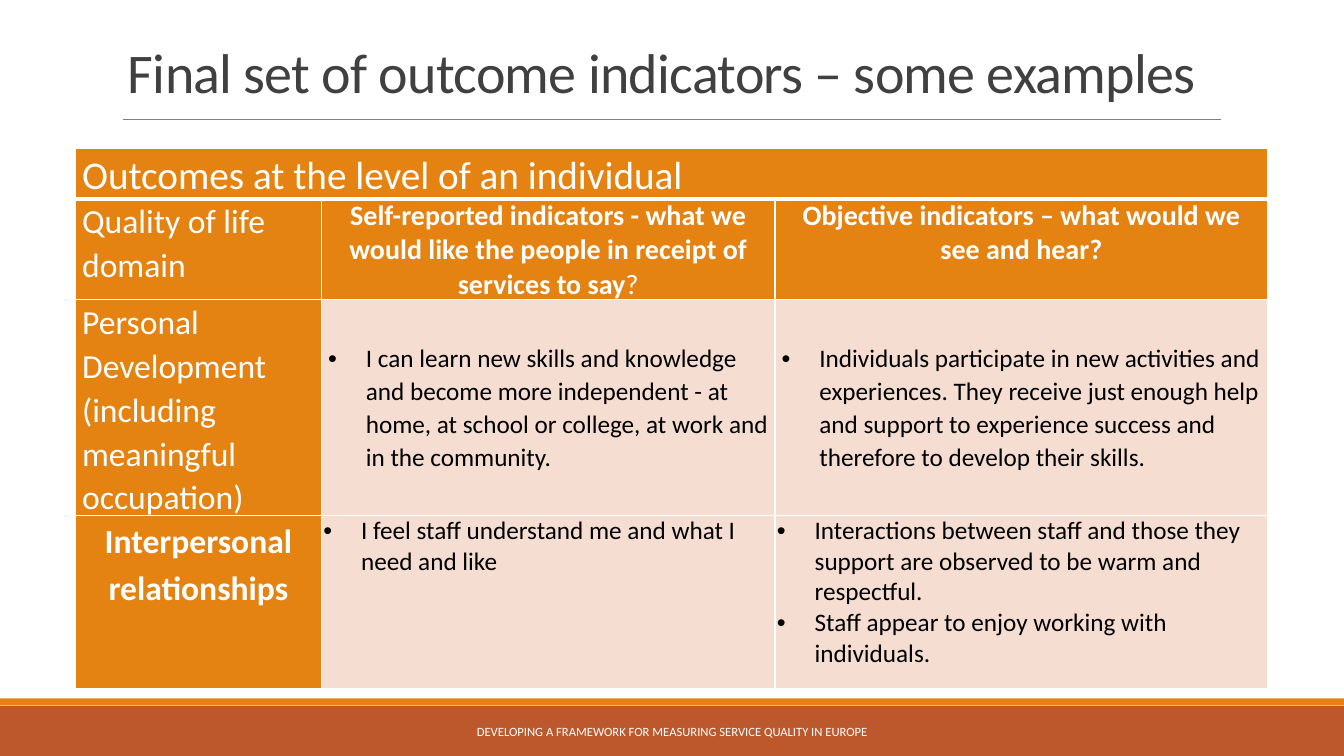
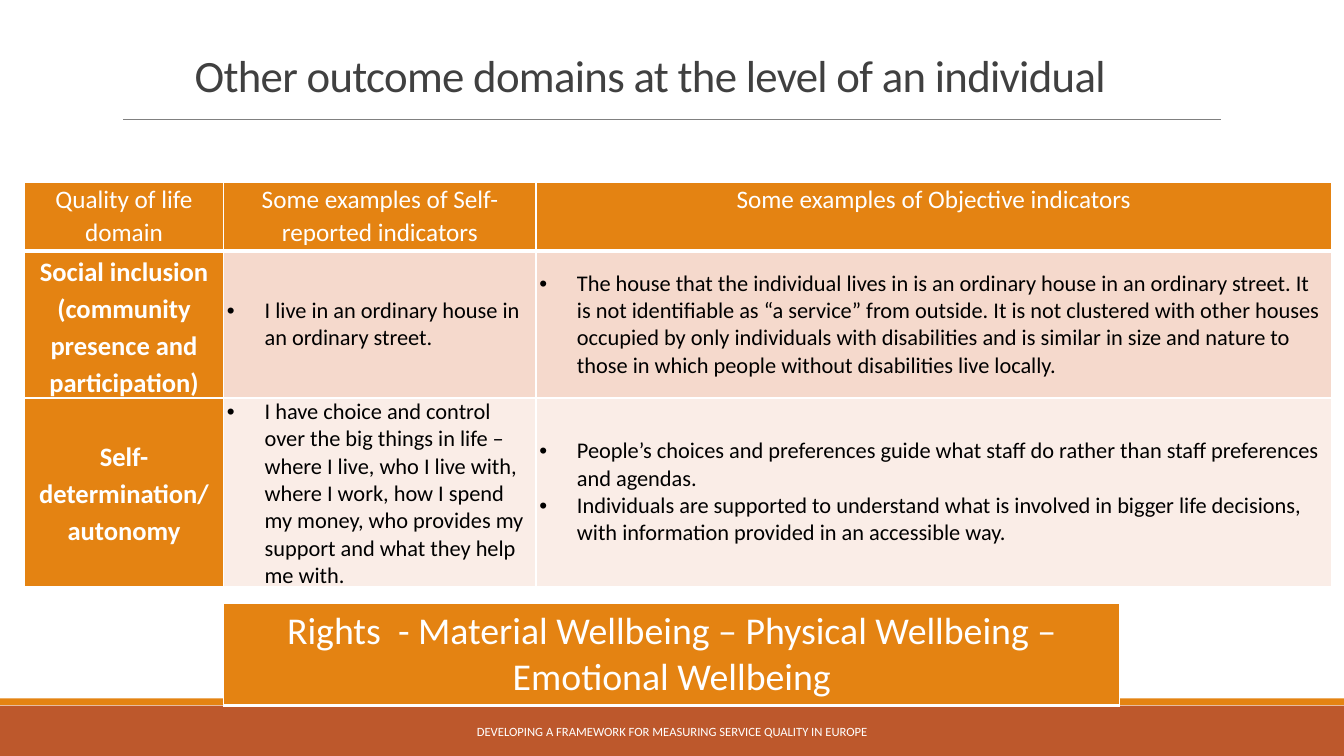
from lxml import etree
from pptx import Presentation
from pptx.dml.color import RGBColor
from pptx.enum.shapes import MSO_CONNECTOR, MSO_SHAPE
from pptx.enum.text import MSO_ANCHOR, MSO_AUTO_SIZE, PP_ALIGN
from pptx.oxml.ns import qn
from pptx.util import Cm, Pt

rgb = RGBColor.from_string
TOP, MIDDLE = MSO_ANCHOR.TOP, MSO_ANCHOR.MIDDLE
CENTER = PP_ALIGN.CENTER

# Shared look
FONT = "Calibri"
ORANGE, RUST, WHITE, BLACK = "E48312", "BD582C", "FFFFFF", "000000"
GREY, DARK = "808080", "404040"
PEACH, BLUSH, PALE = "F5DDD2", "F5D9CC", "FAEDE7"
FOOTER = "DEVELOPING A FRAMEWORK FOR MEASURING SERVICE QUALITY IN EUROPE"


def write(frame, *paragraphs, size, color=WHITE, bold=False, align=PP_ALIGN.LEFT,
          line=1.0, after=0, bullet=False, tracking=0, plain_end=""):
    """Fill a text frame; plain_end is a closing piece that is never bold."""
    for number, text in enumerate(paragraphs):
        paragraph = frame.add_paragraph() if number else frame.paragraphs[0]
        paragraph.alignment = align
        paragraph.line_spacing = line
        paragraph.space_before, paragraph.space_after = Pt(0), Pt(after)
        if bullet:
            props = paragraph._p.get_or_add_pPr()
            props.set("marL", str(Cm(0.95)))
            props.set("indent", str(-Cm(0.95)))
            etree.SubElement(props, qn("a:buFont"), typeface="Arial")
            etree.SubElement(props, qn("a:buChar"), char="•")
        for piece, weight in ((text, bold), (plain_end, False)):
            if piece:
                run = paragraph.add_run()
                run.text = piece
                run.font.name, run.font.size, run.font.bold = FONT, Pt(size), weight
                run.font.color.rgb = rgb(color)
                if tracking:
                    run._r.get_or_add_rPr().set("spc", str(tracking))


def add_grid(slide, left, top, widths, heights, inset, rows):
    """Add a table; a row with a single cell spans all columns."""
    grid = slide.shapes.add_table(len(heights), len(widths), Cm(left), Cm(top),
                                  Cm(sum(widths)), Cm(sum(heights))).table
    grid.horz_banding = False
    for column, width in zip(grid.columns, widths):
        column.width = Cm(width)
    for r, (height, (side, cells)) in enumerate(zip(heights, rows)):
        grid.rows[r].height = Cm(height)
        for cell in grid.rows[r].cells:
            props = cell._tc.get_or_add_tcPr()
            for edge in ("lnL", "lnR", "lnT", "lnB"):
                weight = 3 if r == 0 and edge == "lnB" else 1
                border = etree.SubElement(props, qn(f"a:{edge}"), w=str(Pt(weight)))
                paint = etree.SubElement(border, qn("a:solidFill"))
                etree.SubElement(paint, qn("a:srgbClr"), val=WHITE)
        if len(cells) < len(widths):
            grid.cell(r, 0).merge(grid.cell(r, len(widths) - 1))
        for c, (fill, anchor, style, *paragraphs) in enumerate(cells):
            cell = grid.cell(r, c)
            cell.fill.solid()
            cell.fill.fore_color.rgb = rgb(fill)
            cell.margin_left = cell.margin_right = Cm(side)
            cell.margin_top = cell.margin_bottom = Cm(inset)
            cell.vertical_anchor = anchor
            write(cell.text_frame, *paragraphs, **style)


# Text styles of the tables
banner = dict(size=28, line=1.07, after=8)
domain = dict(size=24, line=1.07, after=8)
question = dict(size=20, bold=True, align=CENTER, after=8)
domain_bold = dict(size=24, bold=True, align=CENTER, line=1.15, after=12)
indicator = dict(size=18, color=BLACK, bullet=True)
indicator_airy = dict(indicator, line=1.07)
heading = dict(size=18, align=CENTER, line=1.07, after=8)
domain_small = dict(domain_bold, size=19)
indicator_small = dict(indicator, size=16)

# Tables: left, top, column widths, row heights, vertical inset, rows;
# a row is its side inset and its cells
examples = (1.9, 3.74, [6.2, 11.43, 12.42], [1.22, 2.54, 5.38, 4.37], 0, [
    (0.17, [(ORANGE, TOP, banner, "Outcomes at the level of an individual")]),
    (0.17, [
        (ORANGE, TOP, domain, "Quality of life domain"),
        (ORANGE, TOP, dict(question, plain_end="?"),
         "Self-reported indicators - what we would like the people in receipt of "
         "services to say"),
        (ORANGE, TOP, question, "Objective indicators – what would we see and hear?")]),
    (0.17, [
        (ORANGE, TOP, domain, "Personal Development (including meaningful occupation)"),
        (PEACH, MIDDLE, indicator_airy,
         "I can learn new skills and knowledge and become more independent - at home, "
         "at school or college, at work and in the community."),
        (PEACH, MIDDLE, dict(indicator_airy, after=8),
         "Individuals participate in new activities and experiences. They receive just "
         "enough help and support to experience success and therefore to develop their "
         "skills.")]),
    (0.05, [
        (ORANGE, TOP, domain_bold, "Interpersonal relationships"),
        (PEACH, TOP, indicator, "I feel staff understand me and what I need and like"),
        (PEACH, TOP, indicator,
         "Interactions between staff and those they support are observed to be warm and "
         "respectful.",
         "Staff appear to enjoy working with individuals.")]),
])
other_domains = (0.61, 4.6, [5.03, 7.87, 20.04], [1.73, 3.58, 4.75], 0, [
    (0.17, [
        (ORANGE, TOP, heading, "Quality of life domain"),
        (ORANGE, TOP, heading, "Some examples of Self-reported indicators"),
        (ORANGE, TOP, heading, "Some examples of Objective indicators")]),
    (0.08, [
        (ORANGE, TOP, domain_small,
         "Social inclusion (community presence and participation)"),
        (BLUSH, MIDDLE, indicator_small,
         "I live in an ordinary house in an ordinary street."),
        (BLUSH, MIDDLE, indicator_small,
         "The house that the individual lives in is an ordinary house in an ordinary "
         "street. It is not identifiable as “a service” from outside. It is not "
         "clustered with other houses occupied by only individuals with disabilities "
         "and is similar in size and nature to those in which people without "
         "disabilities live locally.")]),
    (0.08, [
        (ORANGE, MIDDLE, domain_small, "Self-determination/ autonomy"),
        (PALE, MIDDLE, indicator_small,
         "I have choice and control over the big things in life – where I live, who I "
         "live with, where I work, how I spend my money, who provides my support and "
         "what they help me with."),
        (PALE, MIDDLE, indicator_small,
         "People’s choices and preferences guide what staff do rather than staff "
         "preferences and agendas.",
         "Individuals are supported to understand what is involved in bigger life "
         "decisions, with information provided in an accessible way.")]),
])
further_domains = (5.64, 15.21, [22.58], [2.57], 0.13, [
    (0.25, [(ORANGE, TOP, dict(size=27, align=CENTER),
             "Rights  - Material Wellbeing – Physical Wellbeing – Emotional Wellbeing")]),
])

# Slides: title, its size, its box, tables
slides = [
    ("Final set of outcome indicators – some examples", 40,
     (2.97, 0.69, 27.94, 2.08), [examples]),
    ("Other outcome domains at the level of an individual", 32,
     (4.65, 1.75, 26.31, 0.94), [other_domains, further_domains]),
]

deck = Presentation()
deck.slide_width, deck.slide_height = Cm(33.87), Cm(19.05)

for headline, headline_size, box, grids in slides:
    slide = deck.slides.add_slide(deck.slide_layouts[5])

    # Bands at the foot
    for color, top, height in ((RUST, 17.78, 1.27), (ORANGE, 17.6, 0.17)):
        band = slide.shapes.add_shape(MSO_SHAPE.RECTANGLE, 0, Cm(top),
                                      deck.slide_width, Cm(height))
        band.shadow.inherit = False
        band.fill.solid()
        band.fill.fore_color.rgb = rgb(color)
        band.line.fill.background()

    # Rule under the title
    rule = slide.shapes.add_connector(MSO_CONNECTOR.STRAIGHT,
                                      Cm(3.1), Cm(3.02), Cm(30.78), Cm(3.02))
    rule.line.color.rgb = rgb(GREY)
    rule.line.width = Pt(0.5)
    etree.SubElement(rule._element.spPr, qn("a:effectLst"))

    # Title
    title = slide.shapes.title
    title.left, title.top, title.width, title.height = map(Cm, box)
    title.text_frame.word_wrap = True
    title.text_frame.auto_size = MSO_AUTO_SIZE.NONE
    title.text_frame.vertical_anchor = MSO_ANCHOR.BOTTOM
    write(title.text_frame, headline, size=headline_size, color=DARK, line=0.85,
          tracking=-50)

    # Footer
    footer = slide.shapes.add_textbox(Cm(10.24), Cm(17.93), Cm(13.39), Cm(1.02)).text_frame
    footer.word_wrap = True
    footer.vertical_anchor = MIDDLE
    write(footer, FOOTER, size=9, align=CENTER)

    # Tables
    for grid in grids:
        add_grid(slide, *grid)

deck.save("out.pptx")
